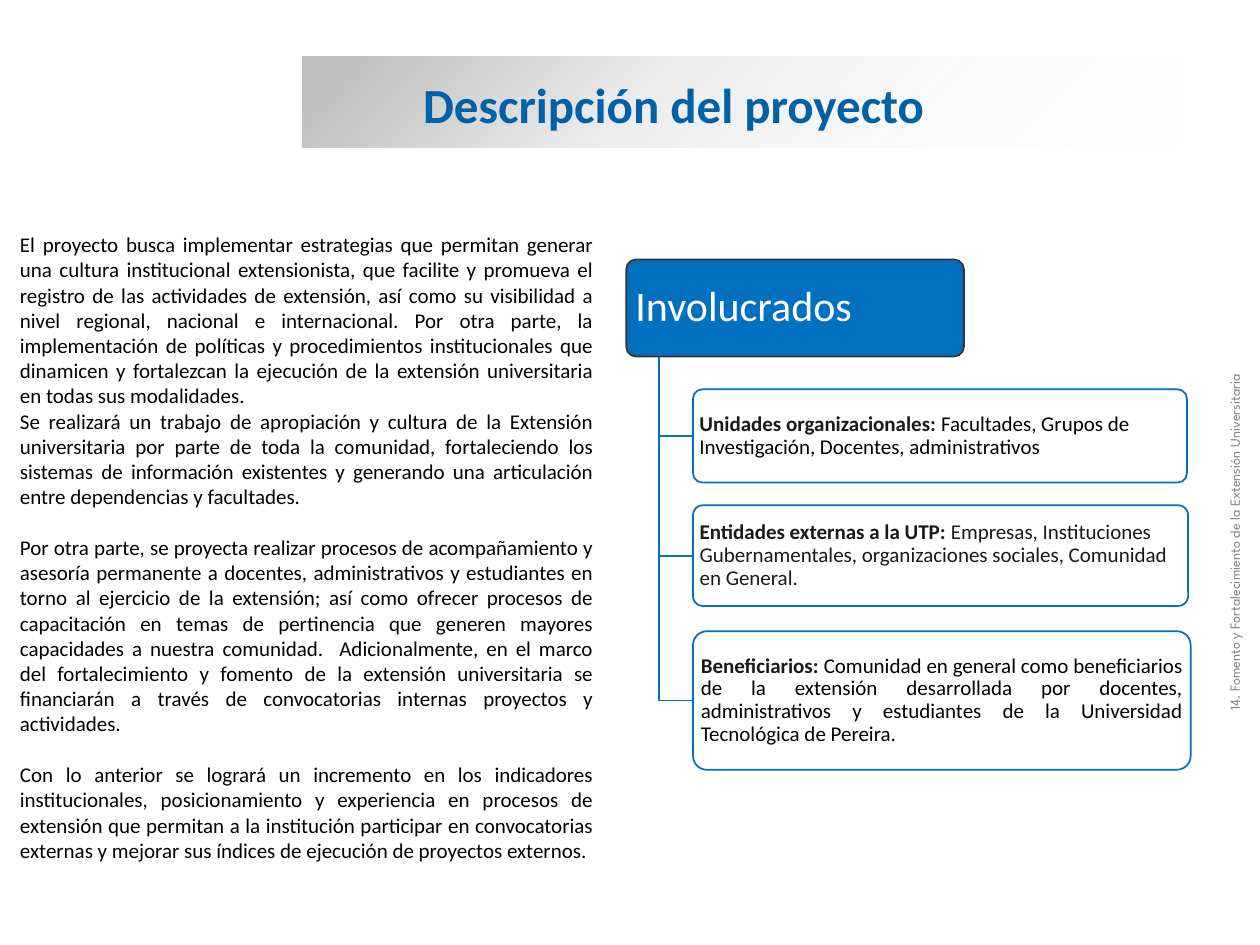
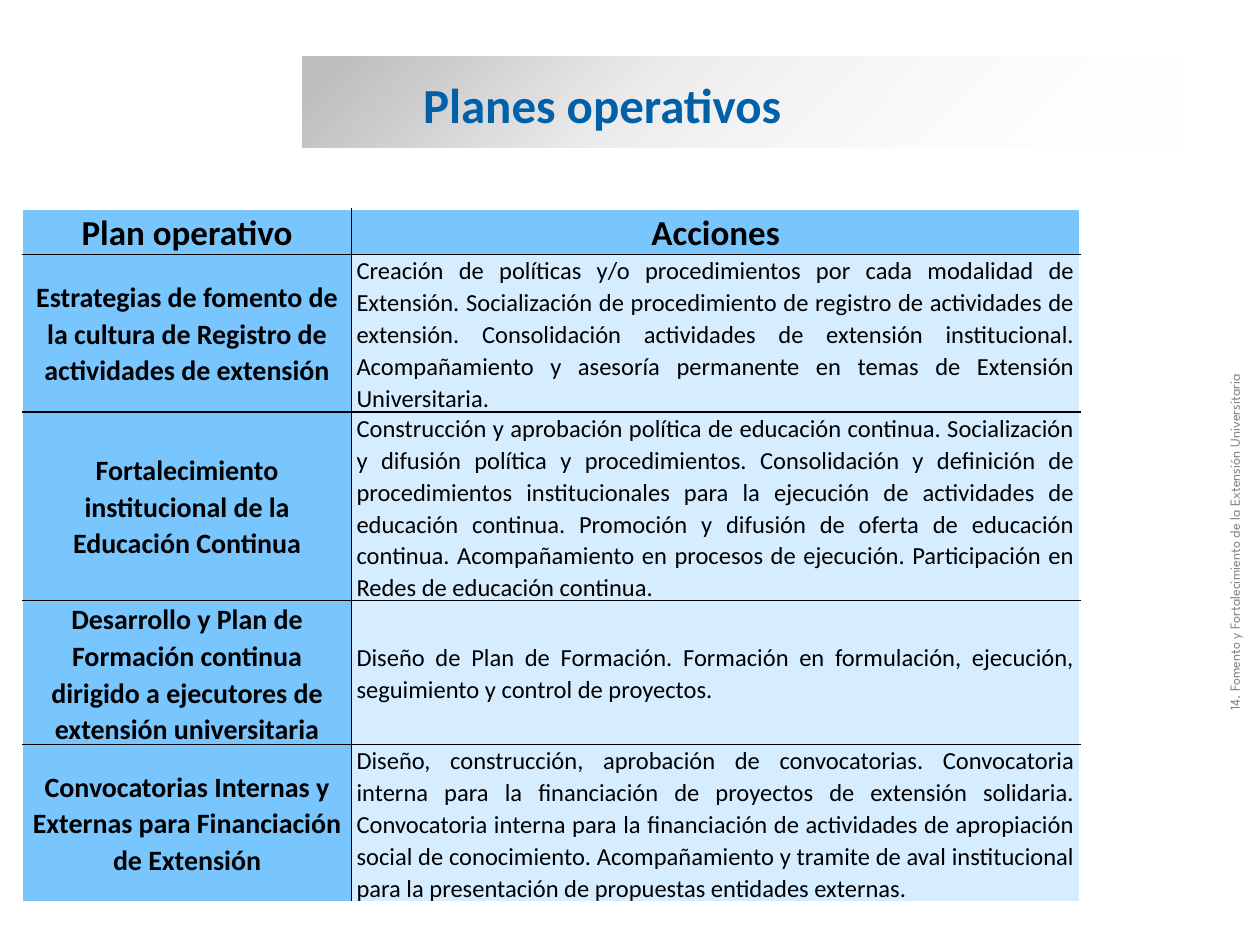
"""Build the project description and operational plan slides."""
from dataclasses import dataclass

from lxml import etree
from pptx import Presentation
from pptx.dml.color import RGBColor
from pptx.enum import shapes, text
from pptx.oxml import parse_xml
from pptx.oxml.ns import nsdecls, qn
from pptx.util import Inches, Pt

TITLE_BLUE = RGBColor(0x00, 0x60, 0xA8)
BLUE = RGBColor(0x00, 0x70, 0xC0)
BROWN = RGBColor(0x3F, 0x30, 0x29)
DARK = RGBColor(0x19, 0x19, 0x19)
BLACK = RGBColor(0x00, 0x00, 0x00)
GREY = RGBColor(0x80, 0x80, 0x80)
WHITE = RGBColor(0xFF, 0xFF, 0xFF)
HEAD_FILL = RGBColor(0x79, 0xC6, 0xFF)
CELL_FILL = RGBColor(0xD5, 0xED, 0xFF)

LEFT, CENTER, JUSTIFY = (text.PP_ALIGN.LEFT, text.PP_ALIGN.CENTER,
                         text.PP_ALIGN.JUSTIFY)
MIDDLE = text.MSO_ANCHOR.MIDDLE
FOOTER = "14. Fomento y Fortalecimiento de la Extensión Universitaria"
BAND_STOPS = [(5, "BFBFBF", 100), (37, "BFBFBF", 31), (100, "FFFFFF", 0)]
TRUNK_X, TRUNK_TOP, BRANCH_X = 5.23, 2.83, 5.5


@dataclass
class Run:
    """A stretch of text in one format."""
    text: str
    size: float
    color: RGBColor = BLACK
    bold: bool = False
    name: str = "Calibri"


@dataclass
class Para:
    """A paragraph and its layout."""
    runs: list[Run]
    align: text.PP_ALIGN = LEFT
    spacing: float = 1.0
    before: float = 0


@dataclass
class Group:
    """A box of people involved, hung from the trunk line."""
    top: float
    width: float
    height: float
    label: str
    members: str
    color: RGBColor = BLACK
    align: text.PP_ALIGN = LEFT


@dataclass
class Plan:
    """A table row: plan, actions and row height."""
    name: str
    actions: str
    height: float


BODY = [
    ("El proyecto busca implementar estrategias que permitan generar una cultura "
     "institucional extensionista, que facilite y promueva el registro de las "
     "actividades de extensión, así como su visibilidad a nivel regional, nacional "
     "e internacional. Por otra parte, la implementación de políticas y "
     "procedimientos institucionales que dinamicen y fortalezcan la ejecución de la "
     "extensión universitaria en todas sus modalidades.", 0),
    ("Se realizará un trabajo de apropiación y cultura de la Extensión universitaria "
     "por parte de toda la comunidad, fortaleciendo los sistemas de información "
     "existentes y generando una articulación entre dependencias y facultades.", 0),
    ("Por otra parte, se proyecta realizar procesos de acompañamiento y asesoría "
     "permanente a docentes, administrativos y estudiantes en torno al ejercicio de "
     "la extensión; así como ofrecer procesos de capacitación en temas de pertinencia "
     "que generen mayores capacidades a nuestra comunidad.  Adicionalmente, en el "
     "marco del fortalecimiento y fomento de la extensión universitaria se "
     "financiarán a través de convocatorias internas proyectos y actividades.", 14.6),
    ("Con lo anterior se logrará un incremento en los indicadores institucionales, "
     "posicionamiento y experiencia en procesos de extensión que permitan a la "
     "institución participar en convocatorias externas y mejorar sus índices de "
     "ejecución de proyectos externos.", 14.6),
]
GROUPS = [
    Group(3.09, 3.92, 0.74, "Unidades organizacionales: ",
          "Facultades, Grupos de Investigación, Docentes, administrativos"),
    Group(4.01, 3.93, 0.8, "Entidades externas a la UTP: ",
          "Empresas, Instituciones Gubernamentales, organizaciones sociales, "
          "Comunidad en General.", DARK),
    Group(5.01, 3.95, 1.1, "Beneficiarios: ",
          "Comunidad en general como beneficiarios de la extensión desarrollada por "
          "docentes, administrativos y estudiantes de la Universidad Tecnológica de "
          "Pereira.", align=JUSTIFY),
]
PLANS = [
    Plan("Estrategias de fomento de la cultura de Registro de actividades de extensión",
         "Creación de políticas y/o procedimientos por cada modalidad de Extensión. "
         "Socialización de procedimiento de registro de actividades de extensión. "
         "Consolidación actividades de extensión institucional. Acompañamiento y "
         "asesoría permanente en temas de Extensión Universitaria.", 1.25),
    Plan("Fortalecimiento institucional de la Educación Continua",
         "Construcción y aprobación política de educación continua. Socialización y "
         "difusión política y procedimientos. Consolidación y definición de "
         "procedimientos institucionales para la ejecución de actividades de "
         "educación continua. Promoción y difusión de oferta de educación continua. "
         "Acompañamiento en procesos de ejecución. Participación en Redes de "
         "educación continua.", 1.49),
    Plan("Desarrollo y Plan de Formación continua dirigido a ejecutores de extensión "
         "universitaria",
         "Diseño de Plan de Formación. Formación en formulación, ejecución, "
         "seguimiento y control de proyectos.", 1.14),
    Plan("Convocatorias Internas y Externas para Financiación de Extensión",
         "Diseño, construcción, aprobación de convocatorias. Convocatoria interna "
         "para la financiación de proyectos de extensión solidaria. Convocatoria "
         "interna para la financiación de actividades de apropiación social de "
         "conocimiento. Acompañamiento y tramite de aval institucional para la "
         "presentación de propuestas entidades externas.", 1.25),
]


def set_all(target, values: dict) -> None:
    """Set every named attribute on the target."""
    for key, value in values.items():
        setattr(target, key, value)


def margins(x: float, y: float) -> dict:
    """Return equal side margins and equal top and bottom margins."""
    return {"margin_left": Inches(x), "margin_right": Inches(x),
            "margin_top": Inches(y), "margin_bottom": Inches(y)}


def write(tf, paras: list[Para]) -> None:
    """Fill a text frame with paragraphs."""
    for i, para in enumerate(paras):
        p = tf.add_paragraph() if i else tf.paragraphs[0]
        set_all(p, {"alignment": para.align, "line_spacing": para.spacing,
                    "space_before": Pt(para.before)})
        for run in para.runs:
            r = p.add_run()
            r.text = run.text
            set_all(r.font, {"name": run.name, "size": Pt(run.size), "bold": run.bold})
            r.font.color.rgb = run.color


def add_text(slide, box: tuple, paras: list[Para], anchor=text.MSO_ANCHOR.TOP):
    """Add a wrapping text box that grows with its text."""
    sp = slide.shapes.add_textbox(*map(Inches, box))
    set_all(sp.text_frame, {"word_wrap": True, "vertical_anchor": anchor,
                            "auto_size": text.MSO_AUTO_SIZE.SHAPE_TO_FIT_TEXT})
    write(sp.text_frame, paras)
    return sp


def add_band(slide) -> None:
    """Draw the fading grey band behind the title."""
    sp = slide.shapes.add_shape(shapes.MSO_SHAPE.RECTANGLE,
                                *map(Inches, (2.4, 0.45, 6.98, 0.72)))
    sp.shadow.inherit = False
    sp.line.fill.background()
    sp.fill.background()
    stops = "".join(
        f'<a:gs pos="{pos * 1000}"><a:srgbClr val="{color}">'
        f'<a:alpha val="{alpha * 1000}"/></a:srgbClr></a:gs>'
        for pos, color, alpha in BAND_STOPS)
    props = sp.element.spPr
    props.replace(props.find(qn("a:noFill")), parse_xml(
        f'<a:gradFill {nsdecls("a")} rotWithShape="1"><a:gsLst>{stops}</a:gsLst>'
        '<a:lin ang="2700000" scaled="0"/></a:gradFill>'))


def add_slide(prs, title: str):
    """Add a slide with the shared band, title and side footer."""
    slide = prs.slides.add_slide(prs.slide_layouts[6])
    add_band(slide)
    add_text(slide, (3.26, 0.54, 6.2, 0.57),
             [Para([Run(title, 28, TITLE_BLUE, True)])], MIDDLE)
    footer = add_text(slide, (7.38, 3.2, 4.84, 0.24),
                      [Para([Run(FOOTER, 8, GREY, name="League Spartan")], JUSTIFY)])
    footer.rotation = 270
    return slide


def add_card(slide, box: tuple, fill: RGBColor, line: RGBColor, para: Para,
             inset: tuple) -> None:
    """Add a rounded box with text."""
    sp = slide.shapes.add_shape(shapes.MSO_SHAPE.ROUNDED_RECTANGLE, *map(Inches, box))
    sp.adjustments[0] = 0.1
    sp.shadow.inherit = False
    sp.fill.solid()
    sp.fill.fore_color.rgb = fill
    sp.line.color.rgb = line
    sp.line.width = Pt(1)
    set_all(sp.text_frame, {"word_wrap": True, "vertical_anchor": MIDDLE,
                            **margins(*inset)})
    write(sp.text_frame, [para])


def add_branch(slide, y: float) -> None:
    """Draw the elbow line from the trunk to a group box."""
    fb = slide.shapes.build_freeform(Inches(TRUNK_X), Inches(TRUNK_TOP))
    fb.add_line_segments([(Inches(TRUNK_X), Inches(y)), (Inches(BRANCH_X), Inches(y))],
                         close=False)
    sp = fb.convert_to_shape()
    sp.shadow.inherit = False
    sp.fill.background()
    sp.line.color.rgb = BLUE
    sp.line.width = Pt(1)


def add_border(cell, side: str) -> None:
    """Give one side of a cell a thin black border."""
    ln = etree.SubElement(cell._tc.get_or_add_tcPr(), qn(f"a:{side}"), w=str(Pt(1)))
    fill = etree.SubElement(ln, qn("a:solidFill"))
    etree.SubElement(fill, qn("a:srgbClr"), val=str(BLACK))


def add_plans(slide) -> None:
    """Add the table of plans and actions."""
    rows = [Plan("Plan operativo", "Acciones", 0.36), *PLANS]
    widths = (2.61, 5.78)
    height = sum(row.height for row in rows)
    table = slide.shapes.add_table(len(rows), len(widths), Inches(0.18), Inches(1.66),
                                   Inches(sum(widths)), Inches(height)).table
    table.horz_banding = False
    for column, width in zip(table.columns, widths):
        column.width = Inches(width)
    for i, row in enumerate(rows):
        table.rows[i].height = Inches(row.height)
        for j, content in enumerate((row.name, row.actions)):
            cell = table.cell(i, j)
            inner = {"lnL": j > 0, "lnR": j == 0, "lnT": i > 0,
                     "lnB": i < len(rows) - 1}
            for side in (s for s, shown in inner.items() if shown):
                add_border(cell, side)
            heading = i == 0 or j == 0
            cell.fill.solid()
            cell.fill.fore_color.rgb = HEAD_FILL if heading else CELL_FILL
            set_all(cell, {"vertical_anchor": MIDDLE, **margins(0.04, 0)})
            size = 20 if i == 0 else 16 if j == 0 else 14
            write(cell.text_frame, [Para([Run(content, size, bold=heading)],
                                         CENTER if heading else JUSTIFY, 1.07)])


def add_description(slide) -> None:
    """Add the project text and the tree of people involved."""
    add_card(slide, (4.97, 2.06, 2.68, 0.77), BLUE, BROWN,
             Para([Run("Involucrados", 24, WHITE)], spacing=0.9), (0.05, 0.03))
    for g in GROUPS:
        add_branch(slide, g.top + g.height / 2)
        runs = [Run(g.label, 12, DARK, True), Run(g.members, 12, g.color)]
        add_card(slide, (BRANCH_X, g.top, g.width, g.height), WHITE, BLUE,
                 Para(runs, g.align, 0.9), (0.03, 0.02))
    add_text(slide, (0.06, 1.79, 4.75, 5.15),
             [Para([Run(body, 12)], JUSTIFY, before=gap) for body, gap in BODY])


def main() -> None:
    """Build and save the deck."""
    prs = Presentation()
    set_all(prs, {"slide_width": Inches(10), "slide_height": Inches(7.5)})
    add_description(add_slide(prs, "Descripción del proyecto"))
    add_plans(add_slide(prs, "Planes operativos"))
    prs.save("out.pptx")


if __name__ == "__main__":
    main()
